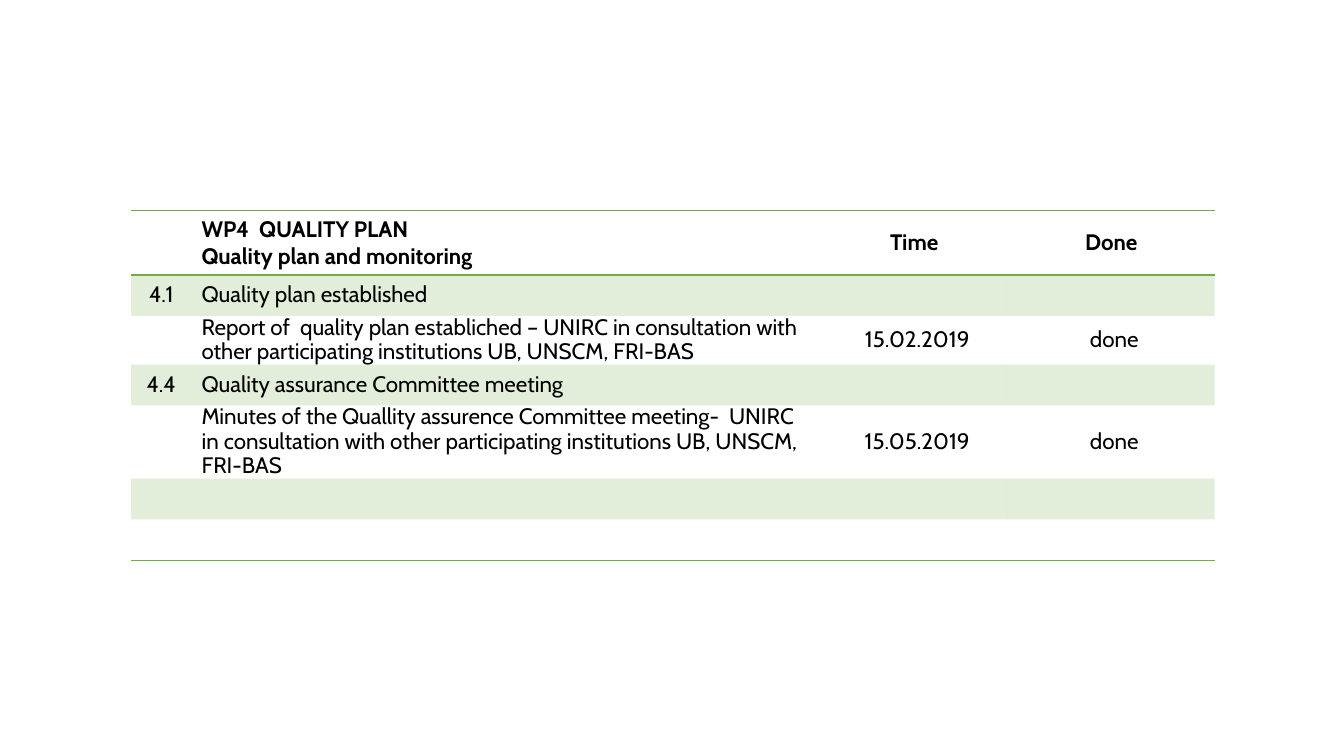
import dataclasses

import lxml.etree
import pptx
import pptx.dml.color
import pptx.enum.text
import pptx.oxml.ns
import pptx.util

Pt = pptx.util.Pt
LEFT = pptx.enum.text.PP_ALIGN.LEFT
CENTER = pptx.enum.text.PP_ALIGN.CENTER
NO_GRID_STYLE = "{2D5ABB26-0587-4C30-8999-92F81FD0307C}"


@dataclasses.dataclass
class Theme:
    font: str = "Cabin"
    text_size: float = 16
    text_color: str = "000000"
    green: str = "70AD47"
    band_opacity: int = 20
    rule_width: float = 1


HEADER = ["", "WP4  QUALITY PLAN\vQuality plan and monitoring", "Time", "Done"]
TASKS = [
    ["4.1", "Quality plan established", "", ""],
    ["", "Report of  quality plan establiched – UNIRC in consultation with "
         "other participating institutions UB, UNSCM, FRI-BAS", "15.02.2019", "done"],
    ["4.4", "Quality assurance Committee meeting", "", ""],
    ["", "Minutes of the Quallity assurence Committee meeting-  UNIRC  in consultation with "
         "other participating institutions UB, UNSCM, FRI-BAS", "15.05.2019", "done"],
    [""] * 4,
    [""] * 4,
]
COLUMN_WIDTHS = [43.2, 449.3, 133.9, 147.6]
ROW_HEIGHT = 29.2


def add_element(parent, tag, **attributes):
    return lxml.etree.SubElement(parent, pptx.oxml.ns.qn(tag), attributes)


class SlideBuilder:
    def __init__(self, page, theme):
        self.page = page
        self.theme = theme

    def table(self, left, top, widths, row_count, row_height):
        frame = self.page.shapes.add_table(
            row_count, len(widths), Pt(left), Pt(top), Pt(sum(widths)), Pt(row_height * row_count))
        grid = frame.table
        grid.first_row = grid.horz_banding = False
        for style in frame.element.iter(pptx.oxml.ns.qn("a:tableStyleId")):
            style.text = NO_GRID_STYLE
        for column, width in zip(grid.columns, widths):
            column.width = Pt(width)
        for row in grid.rows:
            row.height = Pt(row_height)
        return grid

    def text(self, cell, words, align=LEFT, bold=False, compact=False, indent=0):
        """Put words in a cell; compact means tight margins and line spacing."""
        cell.vertical_anchor = pptx.enum.text.MSO_ANCHOR.MIDDLE
        para = cell.text_frame.paragraphs[0]
        para.text = words
        para.alignment = align
        if compact:
            cell.margin_left = cell.margin_right = Pt(2.9)
            cell.margin_top = cell.margin_bottom = Pt(0)
            para.line_spacing = 0.9
        if indent:
            for properties in cell._tc.iter(pptx.oxml.ns.qn("a:pPr")):
                properties.set("marL", str(Pt(indent)))
                properties.set("indent", "0")
        for span in para.runs:
            span.font.name = self.theme.font
            span.font.size = Pt(self.theme.text_size)
            span.font.bold = bold
            span.font.color.rgb = pptx.dml.color.RGBColor.from_string(self.theme.text_color)

    def rules(self, cell, *sides):
        """Draw green borders on the given sides, named T or B, in that order."""
        properties = cell._tc.get_or_add_tcPr()
        for position, side in enumerate(sides):
            line = add_element(properties, f"a:ln{side}", w=str(Pt(self.theme.rule_width)))
            add_element(add_element(line, "a:solidFill"), "a:srgbClr", val=self.theme.green)
            properties.insert(position, line)

    def band(self, cell):
        cell.fill.solid()
        cell.fill.fore_color.rgb = pptx.dml.color.RGBColor.from_string(self.theme.green)
        for color in cell._tc.tcPr.iter(pptx.oxml.ns.qn("a:srgbClr")):
            add_element(color, "a:alpha", val=str(self.theme.band_opacity * 1000))


def main():
    deck = pptx.Presentation()
    deck.slide_width, deck.slide_height = Pt(960), Pt(540)
    builder = SlideBuilder(deck.slides.add_slide(deck.slide_layouts[6]), Theme())
    plan = builder.table(93.6, 150.5, COLUMN_WIDTHS, len(TASKS) + 1, ROW_HEIGHT)

    for row, entries in enumerate([HEADER] + TASKS):
        for column, words in enumerate(entries):
            cell = plan.cell(row, column)
            if row % 2:
                builder.band(cell)
            else:
                cell.fill.background()
            if words:
                builder.text(cell, words, align=LEFT if column == 1 else CENTER,
                             bold=row == 0, compact=row > 0,
                             indent=4.3 if row and column else 0)
            if row == 0:
                builder.rules(cell, "T", "B")
            elif row == len(TASKS):
                builder.rules(cell, "B")

    deck.save("out.pptx")


if __name__ == "__main__":
    main()
